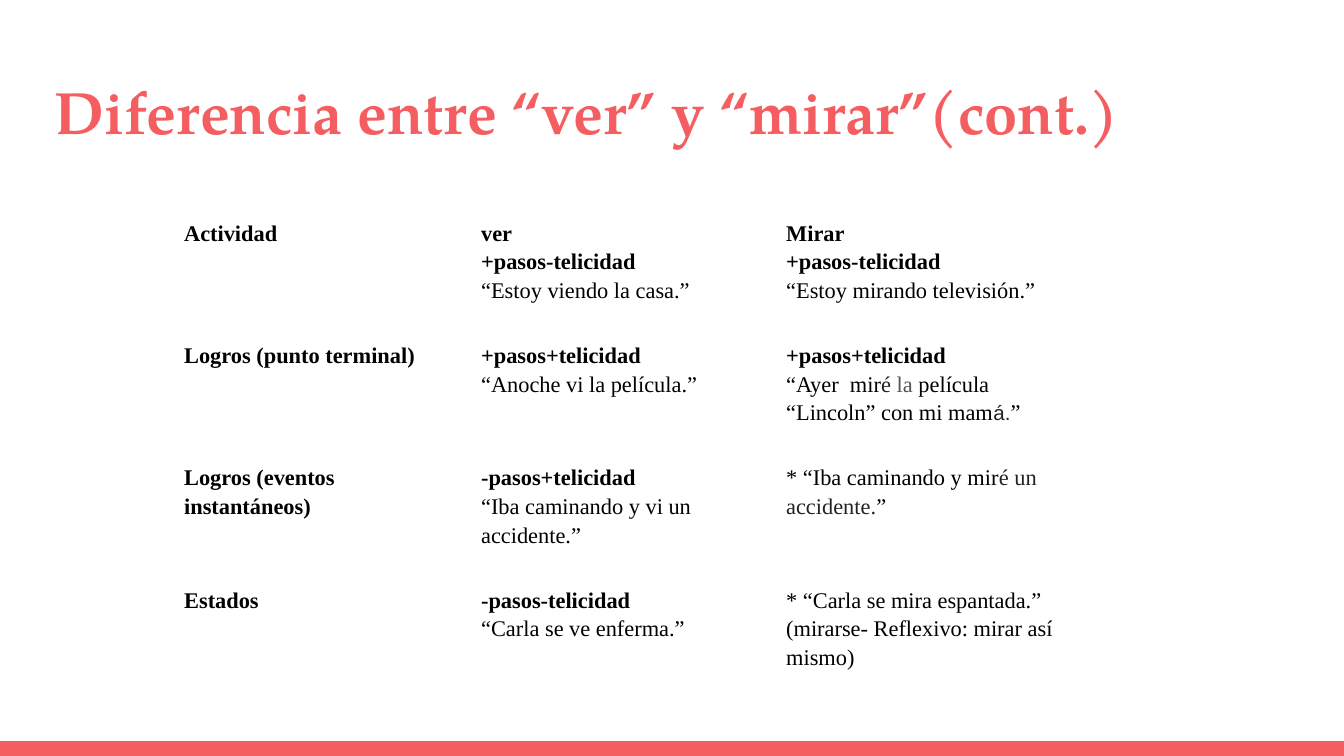
"""Build the slide comparing the Spanish verbs "ver" and "mirar" by type of event."""
from dataclasses import dataclass

from pptx import Presentation
from pptx.dml.color import RGBColor as Rgb
from pptx.enum.shapes import MSO_SHAPE as Preset
from pptx.util import Inches, Pt

TITLE = "Diferencia entre “ver” y “mirar”(cont.)"

EVENTS = [
    [
        (["Actividad"], []),
        (["ver", "+pasos-telicidad"], [("“Estoy viendo la casa.”", "ink")]),
        (["Mirar", "+pasos-telicidad"], [("“Estoy mirando televisión.”", "ink")]),
    ],
    [
        (["Logros (punto terminal)"], []),
        (["+pasos+telicidad"], [("“Anoche vi la película.”", "ink")]),
        (["+pasos+telicidad"], [
            ("“Ayer  mir", "ink"), ("é", "dark"), (" la ", "gray"),
            ("película “Lincoln” con mi mam", "ink"), ("á.", "sans"), ("”", "ink"),
        ]),
    ],
    [
        (["Logros (eventos instantáneos)"], []),
        (["-pasos+telicidad"], [("“Iba caminando y vi un accidente.”", "ink")]),
        ([], [("* “Iba caminando y mir", "ink"), ("é un accidente.", "dark"), ("”", "ink")]),
    ],
    [
        (["Estados"], []),
        (["-pasos-telicidad"], [("“Carla se ve enferma.”", "ink")]),
        ([], [("* “Carla se mira espantada.” (mirarse- Reflexivo: mirar así mismo)", "ink")]),
    ],
]


@dataclass(frozen=True)
class Theme:
    accent: Rgb = Rgb.from_string("F55E61")
    ink: Rgb = Rgb.from_string("000000")
    dark: Rgb = Rgb.from_string("222222")
    gray: Rgb = Rgb.from_string("545454")
    title_font: str = "TeX Gyre Pagella"
    body_font: str = "Times New Roman"
    sans_font: str = "Arial"
    title_size: int = 32
    body_size: int = 12
    sans_size: int = 11
    line_spacing: float = 1.15
    inset: float = 0.1


THEME = Theme()
WIDTH = 10
HEIGHT = WIDTH * 9 / 16
BAR_HEIGHT = 0.11
TABLE_LEFT, TABLE_TOP = 1.27, 1.52
COLUMN_WIDTHS = [2.21, 2.27, 2.27]
ROW_HEIGHT = 0.91


def style(font, face, size, color, bold):
    font.name, font.size, font.bold = face, Pt(size), bold
    font.color.rgb = color


def set_insets(box):
    box.margin_left = box.margin_right = Inches(THEME.inset)
    box.margin_top = box.margin_bottom = Inches(THEME.inset)


def add_bar(slide):
    bar = slide.shapes.add_shape(
        Preset.RECTANGLE, 0, Inches(HEIGHT - BAR_HEIGHT), Inches(WIDTH), Inches(BAR_HEIGHT))
    bar.shadow.inherit = False
    bar.fill.solid()
    bar.fill.fore_color.rgb = THEME.accent
    bar.line.fill.background()


def add_title(slide):
    frame = slide.shapes.add_textbox(
        Inches(0.31), Inches(0.46), Inches(9.32), Inches(0.63)).text_frame
    frame.word_wrap = True
    set_insets(frame)
    heading = frame.paragraphs[0]
    heading.text = TITLE
    style(heading.font, THEME.title_font, THEME.title_size, THEME.accent, True)


def fill_cell(cell, labels, example):
    cell.fill.background()
    set_insets(cell)
    lines = [([(label, "ink")], True) for label in labels]
    if example:
        lines.append((example, False))
    frame = cell.text_frame
    for index, (runs, bold) in enumerate(lines):
        line = frame.add_paragraph() if index else frame.paragraphs[0]
        line.line_spacing = THEME.line_spacing
        style(line.font, THEME.body_font, THEME.body_size, THEME.ink, bold)
        for text, tone in runs:
            run = line.add_run()
            run.text = text
            if tone == "sans":
                style(run.font, THEME.sans_font, THEME.sans_size, THEME.dark, bold)
            else:
                style(run.font, THEME.body_font, THEME.body_size, getattr(THEME, tone), bold)


def add_events(slide):
    table = slide.shapes.add_table(
        len(EVENTS), len(COLUMN_WIDTHS), Inches(TABLE_LEFT), Inches(TABLE_TOP),
        Inches(sum(COLUMN_WIDTHS)), Inches(ROW_HEIGHT * len(EVENTS))).table
    table.first_row = table.horz_banding = False
    for column, width in zip(table.columns, COLUMN_WIDTHS):
        column.width = Inches(width)
    for row, event in zip(table.rows, EVENTS):
        row.height = Inches(ROW_HEIGHT)
        for cell, (labels, example) in zip(row.cells, event):
            fill_cell(cell, labels, example)


def main():
    deck = Presentation()
    deck.slide_width, deck.slide_height = Inches(WIDTH), Inches(HEIGHT)
    slide = deck.slides.add_slide(deck.slide_layouts[6])
    add_bar(slide)
    add_events(slide)
    add_title(slide)
    deck.save("out.pptx")


if __name__ == "__main__":
    main()
